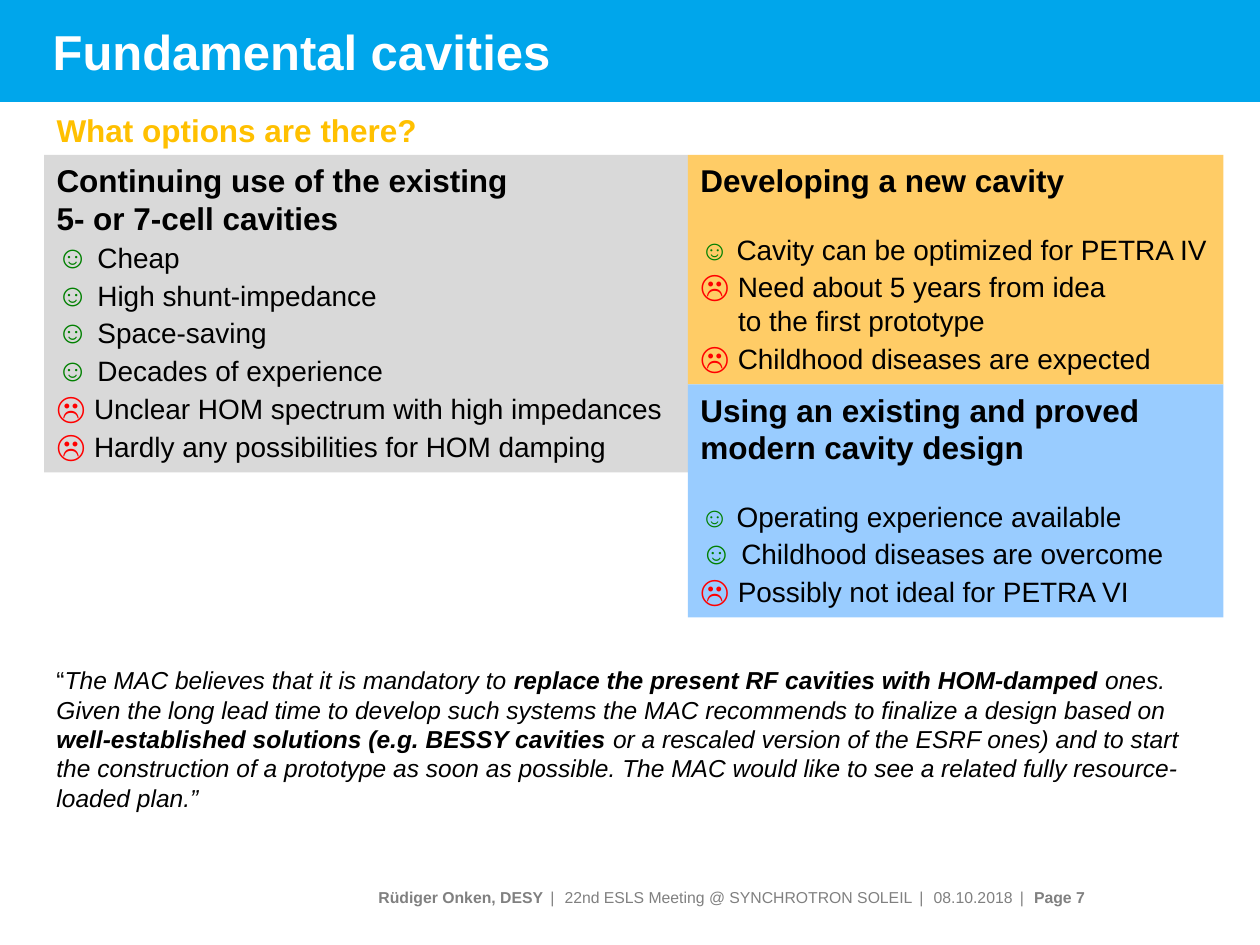
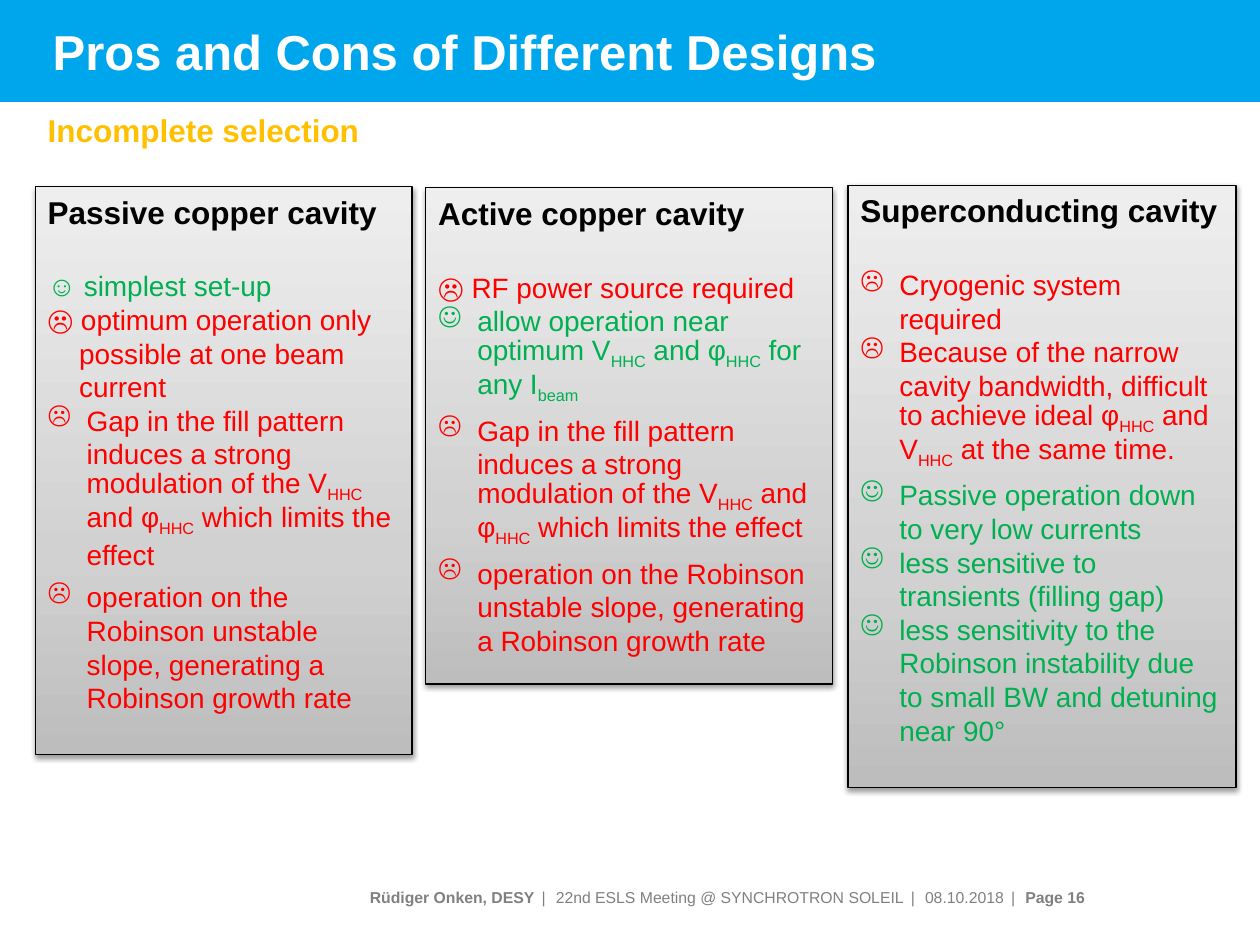
from dataclasses import dataclass

from lxml import etree
from pptx import Presentation
from pptx.dml.color import RGBColor
from pptx.enum.shapes import MSO_SHAPE
from pptx.enum.text import MSO_ANCHOR, PP_ALIGN
from pptx.oxml import parse_xml
from pptx.oxml.ns import nsdecls, qn
from pptx.util import Inches, Pt

RECTANGLE = MSO_SHAPE.RECTANGLE
MIDDLE, TOP = MSO_ANCHOR.MIDDLE, MSO_ANCHOR.TOP
LEFT, RIGHT = PP_ALIGN.LEFT, PP_ALIGN.RIGHT
PRO, CON = "☺", "☹"


@dataclass(frozen=True)
class Theme:
    font: str = "Arial"
    band: str = "00A6EB"
    white: str = "FFFFFF"
    black: str = "000000"
    footer: str = "808080"
    subtitle: str = "FFC000"
    gray: str = "D9D9D9"
    orange: str = "FFCC66"
    blue: str = "99CCFF"
    mark_pro: str = "008000"
    text_pro: str = "00B050"
    con: str = "FF0000"
    gradient: tuple = ((0, "BDBDBD"), (35, "D1D1D1"), (100, "EEEEEE"))
    title_size: int = 28
    heading_size: int = 18
    body_size: int = 16
    quote_size: int = 14
    footer_size: int = 9
    leading: float = 1.2


THEME = Theme()


def add_run(paragraph, text, color=THEME.black, size=THEME.body_size,
            raw=None, **formats):
    """Add a run; raw holds run attributes given straight in XML."""
    run = paragraph.add_run()
    run.text = text
    formats = {"name": THEME.font, "size": Pt(size), "bold": False} | formats
    for name, value in formats.items():
        setattr(run.font, name, value)
    run.font.color.rgb = RGBColor.from_string(color)
    for name, value in (raw or {}).items():
        run._r.get_or_add_rPr().set(name, value)


def add_lines(paragraph, text, **formats):
    """Add text whose line breaks are newlines and subscripts lie in ~."""
    for line_number, line in enumerate(text.split("\n")):
        if line_number:
            paragraph.add_line_break()
        for index, piece in enumerate(line.split("~")):
            if piece:
                raw = {"baseline": "-25000"} if index % 2 else None
                add_run(paragraph, piece, raw=raw, **formats)


def set_paragraph(paragraph, size, hang=0, bullet=None, **formats):
    properties = paragraph._p.get_or_add_pPr()
    if hang:
        properties.set("marL", str(Inches(hang)))
        properties.set("indent", str(-Inches(hang)))
    if bullet:
        etree.SubElement(properties, qn("a:buChar")).set("char", bullet)
    formats = {"alignment": LEFT,
               "line_spacing": Pt(size * THEME.leading)} | formats
    for name, value in formats.items():
        setattr(paragraph, name, value)


def set_frame(shape, anchor=TOP):
    frame = shape.text_frame
    frame.word_wrap = True
    frame.vertical_anchor = anchor
    return frame


def add_text_box(slide, box, anchor=TOP):
    shape = slide.shapes.add_textbox(*map(Inches, box))
    return set_frame(shape, anchor).paragraphs[0]


def add_rectangle(slide, box, color=None):
    shape = slide.shapes.add_shape(RECTANGLE, *map(Inches, box))
    shape.shadow.inherit = False
    if color:
        shape.fill.solid()
        shape.fill.fore_color.rgb = RGBColor.from_string(color)
        shape.line.fill.background()
    return shape


def add_heading(frame, text):
    paragraph = frame.paragraphs[0]
    set_paragraph(paragraph, THEME.heading_size)
    add_lines(paragraph, text, size=THEME.heading_size, bold=True)


def add_footer(slide, page):
    paragraph = add_text_box(slide, (0.31, 6.9, 8.3, 0.44), MIDDLE)
    paragraph.alignment = RIGHT
    parts = (("Rüdiger Onken, DESY", True),
             ("22nd ESLS Meeting @ SYNCHROTRON SOLEIL", False),
             ("08.10.2018", False), (f"Page {page}", True))
    look = {"color": THEME.footer, "size": THEME.footer_size}
    for index, (text, bold) in enumerate(parts):
        if index:
            add_run(paragraph, " | ", raw={"spc": "165"}, **look)
        add_run(paragraph, text, bold=bold, **look)
    paragraph._parent._parent.text_frame.margin_right = 0


def add_base_slide(presentation, title, subtitle, subtitle_left, page):
    slide = presentation.slides.add_slide(presentation.slide_layouts[6])
    add_rectangle(slide, (0, 0, 10, 0.81), THEME.band)
    add_footer(slide, page)
    paragraph = add_text_box(slide, (0.32, -0.11, 9.31, 1.03), MIDDLE)
    add_run(paragraph, title, THEME.white, THEME.title_size, bold=True)
    paragraph = add_text_box(slide, (subtitle_left, 0.83, 3.15, 0.4))
    set_paragraph(paragraph, THEME.heading_size)
    add_run(paragraph, subtitle, THEME.subtitle, THEME.heading_size, bold=True)
    return slide


def add_option(slide, box, color, heading, items, gap):
    """Add a flat box; an item is mark, mark size and text."""
    frame = set_frame(add_rectangle(slide, box, color))
    add_heading(frame, heading)
    for index, (mark, mark_size, text) in enumerate(items):
        paragraph = frame.add_paragraph()
        set_paragraph(paragraph, max(mark_size, THEME.body_size),
                      space_before=Pt(0 if index else gap))
        if mark:
            mark_color = THEME.mark_pro if mark == PRO else THEME.con
            add_run(paragraph, f"{mark} ", mark_color, mark_size)
        else:
            paragraph._p.get_or_add_pPr().set("marL", str(Inches(0.3)))
        add_run(paragraph, text)


def add_quote(slide, box, text):
    """Add an italic quotation whose bold parts lie between asterisks."""
    paragraph = add_text_box(slide, box)
    set_paragraph(paragraph, THEME.quote_size)
    add_run(paragraph, "“", size=THEME.quote_size)
    for index, piece in enumerate(text.split("*")):
        add_run(paragraph, piece, size=THEME.quote_size, italic=True,
                bold=index % 2 == 1)


def add_gradient_card(slide, box):
    shape = add_rectangle(slide, box)
    shape.line.color.rgb = RGBColor.from_string(THEME.black)
    shape.line.width = Pt(0.75)
    stops = "".join(
        f'<a:gs pos="{position * 1000}"><a:srgbClr val="{color}"/></a:gs>'
        for position, color in THEME.gradient)
    properties = shape._element.spPr
    properties.find(qn("a:ln")).addprevious(parse_xml(
        f'<a:gradFill {nsdecls("a")} rotWithShape="1"><a:gsLst>{stops}'
        '</a:gsLst><a:lin ang="16200000" scaled="0"/></a:gradFill>'))
    properties.find(qn("a:effectLst")).append(parse_xml(
        f'<a:outerShdw {nsdecls("a")} blurRad="{Pt(3.1)}" dist="{Pt(1.6)}" '
        'dir="5400000" rotWithShape="0"><a:srgbClr val="000000">'
        '<a:alpha val="38000"/></a:srgbClr></a:outerShdw>'))
    return shape


def add_design(slide, box, heading, items):
    """Add a shaded card; an item is mark, whether it is a bullet, text."""
    frame = set_frame(add_gradient_card(slide, box))
    add_heading(frame, heading)
    for index, (mark, is_bullet, text) in enumerate(items):
        paragraph = frame.add_paragraph()
        set_paragraph(paragraph, THEME.body_size,
                      hang=0.31 if is_bullet else 0.25,
                      bullet=mark if is_bullet else None,
                      space_before=Pt(0 if index else 22),
                      space_after=Pt(5 if "~" in text else 0))
        add_lines(paragraph, text if is_bullet else f"{mark} {text}",
                  color=THEME.text_pro if mark == PRO else THEME.con)


def build_options_slide(presentation):
    slide = add_base_slide(presentation, "Fundamental cavities",
                           "What options are there?", 0.35, 7)
    add_option(slide, (0.35, 1.23, 5.11, 2.52), THEME.gray,
               "Continuing use of the existing\n5- or 7-cell cavities", (
                   (PRO, 18, "Cheap"),
                   (PRO, 18, "High shunt-impedance"),
                   (PRO, 18, "Space-saving"),
                   (PRO, 18, "Decades of experience"),
                   (CON, 18, "Unclear HOM spectrum with high impedances"),
                   (CON, 18, "Hardly any possibilities for HOM damping")),
               gap=0)
    blank_line = THEME.body_size * THEME.leading
    add_option(slide, (5.46, 1.23, 4.25, 1.82), THEME.orange,
               "Developing a new cavity", (
                   (PRO, 16, "Cavity can be optimized for PETRA IV"),
                   (CON, 18, "Need about 5 years from idea"),
                   ("", 16, "to the first prototype"),
                   (CON, 18, "Childhood diseases are expected")),
               gap=blank_line)
    add_option(slide, (5.46, 3.05, 4.25, 1.85), THEME.blue,
               "Using an existing and proved modern cavity design", (
                   (PRO, 16, "Operating experience available"),
                   (PRO, 18, "Childhood diseases are overcome"),
                   (CON, 18, "Possibly not ideal for PETRA VI")),
               gap=blank_line)
    add_quote(slide, (0.35, 5.23, 9.36, 1.28),
              "The MAC believes that it is mandatory to *replace the present "
              "RF cavities with HOM-damped *ones. Given the long lead time to "
              "develop such systems the MAC recommends to finalize a design "
              "based on *well-established solutions (e.g. BESSY cavities *or "
              "a rescaled version of the ESRF ones) and to start the "
              "construction of a prototype as soon as possible. The MAC would "
              "like to see a related fully resource-loaded plan.”")


def build_designs_slide(presentation):
    slide = add_base_slide(presentation, "Pros and Cons of Different Designs",
                           "Incomplete selection", 0.28, 16)
    shared_cons = (
        (CON, True, "Gap in the fill pattern induces a strong modulation of "
                    "the V~HHC~ and φ~HHC~ which limits the effect"),
        (CON, True, "operation on the Robinson unstable slope, generating a "
                    "Robinson growth rate"))
    add_design(slide, (0.28, 1.48, 2.99, 4.51), "Passive copper cavity", (
        (PRO, False, "simplest set-up"),
        (CON, False, "optimum operation only\npossible at one beam\ncurrent"),
        *shared_cons))
    add_design(slide, (3.38, 1.49, 3.23, 3.94), "Active copper cavity", (
        (CON, False, "RF power source required"),
        (PRO, True, "allow operation near optimum V~HHC~ and φ~HHC~ for any "
                    "I~beam~"),
        *shared_cons))
    add_design(slide, (6.73, 1.47, 3.08, 4.78), "Superconducting cavity", (
        (CON, True, "Cryogenic system required"),
        (CON, True, "Because of the narrow cavity bandwidth, difficult to "
                    "achieve ideal φ~HHC~ and V~HHC~ at the same time."),
        (PRO, True, "Passive operation down to very low currents"),
        (PRO, True, "less sensitive to transients (filling gap)"),
        (PRO, True, "less sensitivity to the Robinson instability due to "
                    "small BW and detuning near 90°")))


def main():
    presentation = Presentation()
    presentation.slide_width = Inches(10)
    presentation.slide_height = Inches(7.5)
    build_options_slide(presentation)
    build_designs_slide(presentation)
    presentation.save("out.pptx")


if __name__ == "__main__":
    main()
